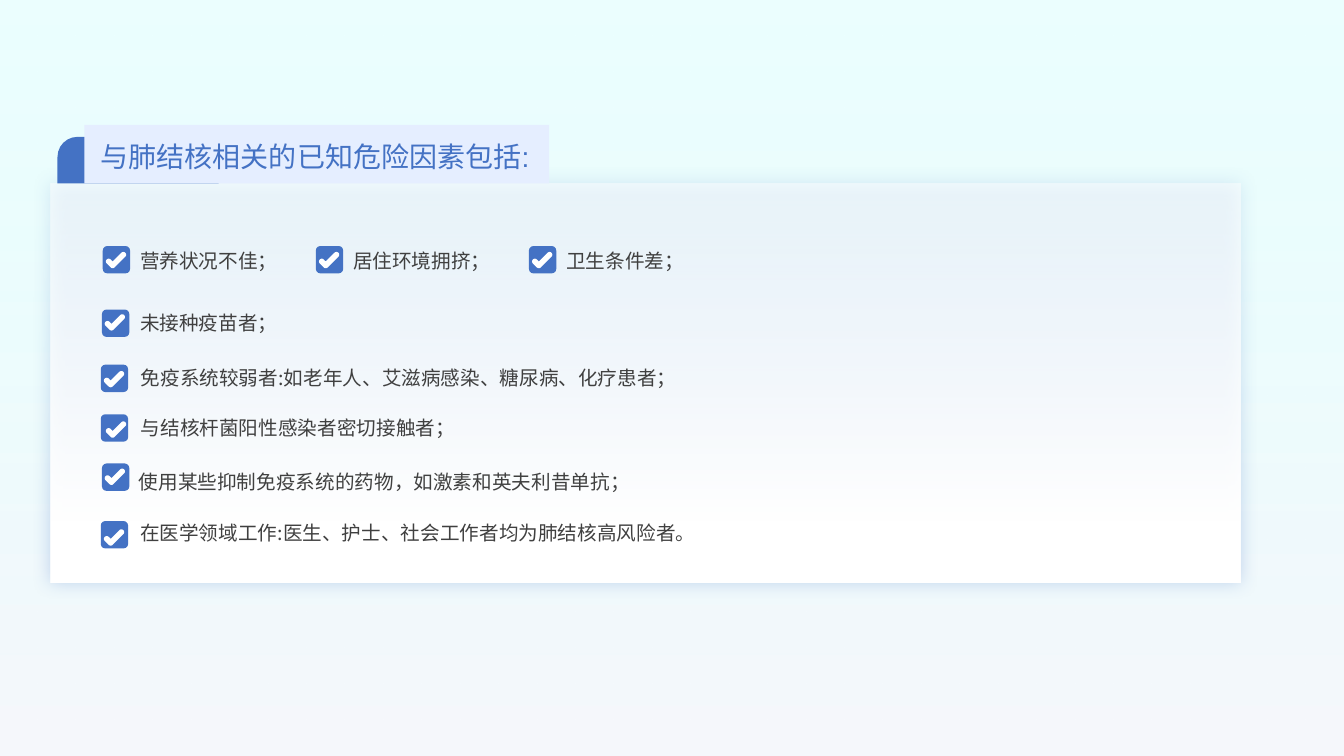
from math import cos, radians, sin

from lxml.etree import SubElement
from pptx import Presentation
from pptx.dml.color import RGBColor
from pptx.enum.shapes import MSO_SHAPE as Preset
from pptx.oxml.ns import qn
from pptx.util import Cm, Pt

COLORS = {
    "blue": "4472C4",
    "heading": "E5EEFF",
    "text": "404040",
    "white": "FFFFFF",
    "mist": "F6F8FC",
    "aqua": "D9FFFF",
}
CJK_FONT = "Noto Sans CJK SC"
WIDTH, HEIGHT = 33.87, 19.05
BOX_SIZE = 0.69

# Wording, box corner, tick corner, text corner, text size (cm)
FIRST_ROW = ["营养状况不佳；", "居住环境拥挤；", "卫生条件差；"]
FIRST_ROW_STEP = 5.37
RISK_FACTORS = [
    (wording, (2.59 + i * FIRST_ROW_STEP, 6.2), (2.67 + i * FIRST_ROW_STEP, 6.35),
     (3.28 + i * FIRST_ROW_STEP, 6.15), (4.19, 0.86))
    for i, wording in enumerate(FIRST_ROW)
] + [
    ("未接种疫苗者；",
     (2.57, 7.8), (2.64, 7.92), (3.28, 7.72), (9.4, 0.86)),
    ("免疫系统较弱者:如老年人、艾滋病感染、糖尿病、化疗患者；",
     (2.54, 9.19), (2.62, 9.35), (3.3, 9.09), (14.02, 0.97)),
    ("与结核杆菌阳性感染者密切接触者；",
     (2.54, 10.44), (2.67, 10.62), (3.3, 10.36), (8.79, 1.04)),
    ("使用某些抑制免疫系统的药物，如激素和英夫利昔单抗；",
     (2.57, 11.68), (2.64, 11.81), (3.25, 11.71), (14.81, 0.86)),
    ("在医学领域工作:医生、护士、社会工作者均为肺结核高风险者。",
     (2.54, 13.13), (2.62, 13.34), (3.28, 13), (20.02, 0.74)),
]


def rgb(color):
    return RGBColor.from_string(COLORS[color])


def add_alpha(color_element, percent):
    SubElement(color_element, qn("a:alpha"), val=str(percent * 1000))


def paint(shape, color):
    """Give the shape a plain fill, without outline or shadow."""
    shape.fill.solid()
    shape.fill.fore_color.rgb = rgb(color)
    shape.line.fill.background()
    shape.shadow.inherit = False


def add_block(slide, preset, left, top, width, height, color):
    block = slide.shapes.add_shape(preset, Cm(left), Cm(top), Cm(width), Cm(height))
    paint(block, color)
    return block


def add_gradient_block(slide, left, top, width, height, stops, angle):
    """Add a rectangle whose stops are (position, colour, opacity percent)."""
    block = add_block(slide, Preset.RECTANGLE, left, top, width, height, "white")
    block.fill.gradient()
    block.fill.gradient_angle = angle
    for stop, (position, color, opacity) in zip(block.fill.gradient_stops, stops):
        stop.position = position
        stop.color.rgb = rgb(color)
    colors = block._element.spPr.iter(qn("a:srgbClr"))
    for element, (_, _, opacity) in zip(list(colors), stops):
        add_alpha(element, opacity)
    return block


def add_glow_shadow(shape, color, blur, opacity):
    effects = shape._element.spPr.find(qn("a:effectLst"))
    shadow = SubElement(effects, qn("a:outerShdw"), blurRad=str(Pt(blur)),
                        dist="0", dir="0", algn="ctr", rotWithShape="0")
    add_alpha(SubElement(shadow, qn("a:srgbClr"), val=COLORS[color]), opacity)


def add_text(slide, wording, left, top, width, height, size, font, color):
    box = slide.shapes.add_textbox(Cm(left), Cm(top), Cm(width), Cm(height))
    box.text_frame.word_wrap = True
    run = box.text_frame.paragraphs[0].add_run()
    run.text = wording
    run.font.size = Pt(size)
    run.font.name = font
    run.font.color.rgb = rgb(color)
    SubElement(run._r.get_or_add_rPr(), qn("a:ea"), typeface=CJK_FONT)


def tick_outline():
    """Points around a tick drawn with a round-ended stroke at 45 degrees."""
    radius = 0.07
    elbow = (0.17, 0.34)
    arcs = [((0.07, 0.24), -45, -225), (elbow, 135, 45), ((0.44, 0.07), 45, -135)]
    points = [
        (x + radius * cos(radians(angle)), y + radius * sin(radians(angle)))
        for (x, y), start, end in arcs
        for angle in range(start, end - 1, -15)
    ]
    return points + [(elbow[0], elbow[1] - 0.1)]


def add_tick(slide, left, top):
    start, *rest = [(Cm(x), Cm(y)) for x, y in tick_outline()]
    builder = slide.shapes.build_freeform(*start)
    builder.add_line_segments(rest, close=True)
    paint(builder.convert_to_shape(Cm(left), Cm(top)), "white")


def add_risk_factor(slide, wording, box, tick, text, text_size):
    add_block(slide, Preset.ROUNDED_RECTANGLE, *box, BOX_SIZE, BOX_SIZE, "blue")
    add_tick(slide, *tick)
    add_text(slide, wording, *text, *text_size, 14, CJK_FONT, "text")


def add_heading(slide):
    tab = add_block(slide, Preset.ROUND_2_SAME_RECTANGLE, 1.45, 3.45, 4.06, 1.17, "blue")
    tab.adjustments[0] = 0.43
    add_block(slide, Preset.RECTANGLE, 2.13, 3.15, 11.71, 1.47, "heading")
    add_text(slide, "与肺结核相关的已知危险因素包括:", 2.29, 3.38, 11.91, 1.12,
             20, "Arial", "blue")


def main():
    prs = Presentation()
    prs.slide_width, prs.slide_height = Cm(WIDTH), Cm(HEIGHT)
    slide = prs.slides.add_slide(prs.slide_layouts[6])

    add_gradient_block(slide, 0, 0, WIDTH, HEIGHT,
                       [(0, "mist", 100), (1, "aqua", 50)], 90)
    panel = add_gradient_block(slide, 1.27, 4.62, 30, 10.06,
                               [(0, "white", 50), (0.85, "white", 100)], 270)
    add_glow_shadow(panel, "blue", 13, 30)
    add_heading(slide)
    for factor in RISK_FACTORS:
        add_risk_factor(slide, *factor)
    prs.save("out.pptx")


if __name__ == "__main__":
    main()
